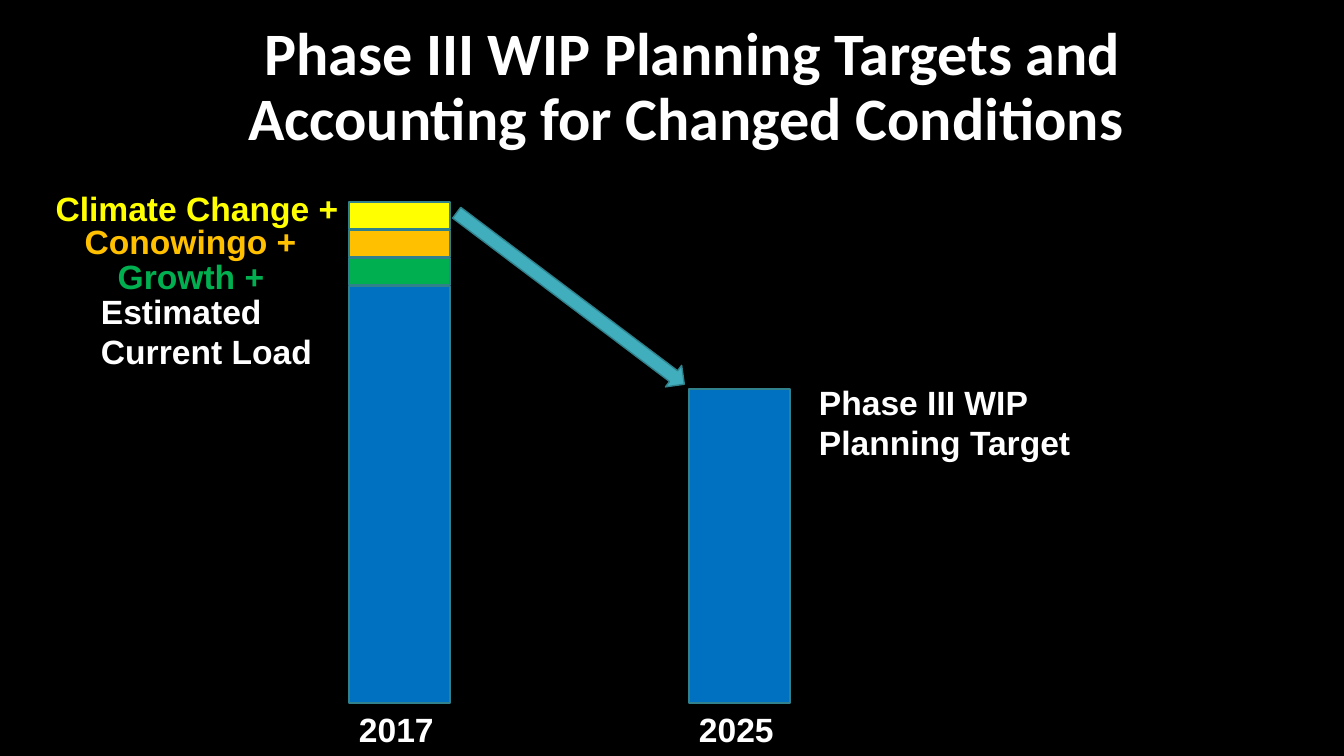
"""Build the Phase III WIP planning targets slide."""
from dataclasses import dataclass

from pptx import Presentation
from pptx.dml.color import RGBColor
from pptx.enum.shapes import MSO_SHAPE
from pptx.enum.text import MSO_ANCHOR, PP_ALIGN
from pptx.slide import Slide
from pptx.util import Emu, Pt

EMU_PER_PX = 914400 / 100.8
COLORS = {
    "background": "000000",
    "text": "FFFFFF",
    "load": "0070C0",
    "growth": "00B050",
    "conowingo": "FFC000",
    "climate": "FFFF00",
    "arrow": "41AEBD",
    "outline": "30818C",
}
BAR_WIDTH = 101
BAR_BOTTOM = 703
LOAD_2017_TOP = 286
TARGET_2025_TOP = 389
SEGMENT_HEIGHT = 27
SEGMENT_PITCH = 28
YEAR_LEFTS = {"2017": 349, "2025": 689}


@dataclass(frozen=True)
class Box:
    left: int
    top: int
    width: int
    height: int


@dataclass(frozen=True)
class Block:
    box: Box
    color: str
    preset: MSO_SHAPE = MSO_SHAPE.RECTANGLE
    rotation: int = 0


@dataclass(frozen=True)
class Label:
    text: str
    box: Box
    color: str = "text"
    align: PP_ALIGN = PP_ALIGN.LEFT
    size: int = 24
    font: str = "Arial"
    line_spacing: float = 1.0
    anchor: MSO_ANCHOR = MSO_ANCHOR.TOP


def px(length: int) -> Emu:
    """Convert pixels to EMU."""
    return Emu(round(length * EMU_PER_PX))


def rgb(name: str) -> RGBColor:
    """Look up a named colour."""
    return RGBColor.from_string(COLORS[name])


def place(box: Box) -> tuple[Emu, Emu, Emu, Emu]:
    """Give the position and size of a box in EMU."""
    return px(box.left), px(box.top), px(box.width), px(box.height)


def draw_block(slide: Slide, block: Block) -> None:
    """Draw a bar segment or the arrow."""
    shape = slide.shapes.add_shape(block.preset, *place(block.box))
    shape.shadow.inherit = False
    shape.rotation = block.rotation
    shape.fill.solid()
    shape.fill.fore_color.rgb = rgb(block.color)
    shape.line.color.rgb = rgb("outline")
    shape.line.width = Pt(1)


def draw_label(slide: Slide, label: Label) -> None:
    """Draw a bold text label."""
    frame = slide.shapes.add_textbox(*place(label.box)).text_frame
    frame.word_wrap = True
    frame.vertical_anchor = label.anchor
    frame.text = label.text
    paragraph = frame.paragraphs[0]
    paragraph.alignment = label.align
    paragraph.line_spacing = label.line_spacing
    font = paragraph.runs[0].font
    font.name = label.font
    font.size = Pt(label.size)
    font.bold = True
    font.color.rgb = rgb(label.color)


def load_bar(year: str, top: int) -> Block:
    """Describe the load bar of a year."""
    return Block(Box(YEAR_LEFTS[year], top, BAR_WIDTH, BAR_BOTTOM - top), "load")


def added_segment(level: int, color: str) -> Block:
    """Describe a segment stacked on the 2017 load."""
    top = LOAD_2017_TOP - level * SEGMENT_PITCH
    return Block(Box(YEAR_LEFTS["2017"], top, BAR_WIDTH, SEGMENT_HEIGHT), color)


BLOCKS = [
    load_bar("2017", LOAD_2017_TOP),
    load_bar("2025", TARGET_2025_TOP),
    *(added_segment(level, color)
      for level, color in enumerate(("growth", "conowingo", "climate"), 1)),
    Block(Box(428, 285, 285, 27), "arrow", MSO_SHAPE.RIGHT_ARROW, 37),
]
LABELS = [
    *(Label(year, Box(left, 704, BAR_WIDTH, 50))
      for year, left in YEAR_LEFTS.items()),
    Label("Phase III WIP Planning Target", Box(809, 377, 301, 92)),
    Label("Estimated Current Load", Box(91, 286, 233, 92)),
    Label("Growth +", Box(93, 251, 196, 50), "growth", PP_ALIGN.CENTER),
    Label("Conowingo +", Box(59, 216, 263, 50), "conowingo", PP_ALIGN.CENTER),
    Label("Climate Change +", Box(25, 183, 344, 50), "climate", PP_ALIGN.CENTER),
    Label("Phase III WIP Planning Targets and Accounting for Changed Conditions ",
          Box(113, 15, 1159, 146), align=PP_ALIGN.CENTER, size=43,
          font="Calibri", line_spacing=0.9, anchor=MSO_ANCHOR.MIDDLE),
]


def main() -> None:
    """Build and save the presentation."""
    presentation = Presentation()
    presentation.slide_width = px(1344)
    presentation.slide_height = px(756)
    slide = presentation.slides.add_slide(presentation.slide_layouts[6])
    slide.background.fill.solid()
    slide.background.fill.fore_color.rgb = rgb("background")
    for block in BLOCKS:
        draw_block(slide, block)
    for label in LABELS:
        draw_label(slide, label)
    presentation.save("out.pptx")


if __name__ == "__main__":
    main()
